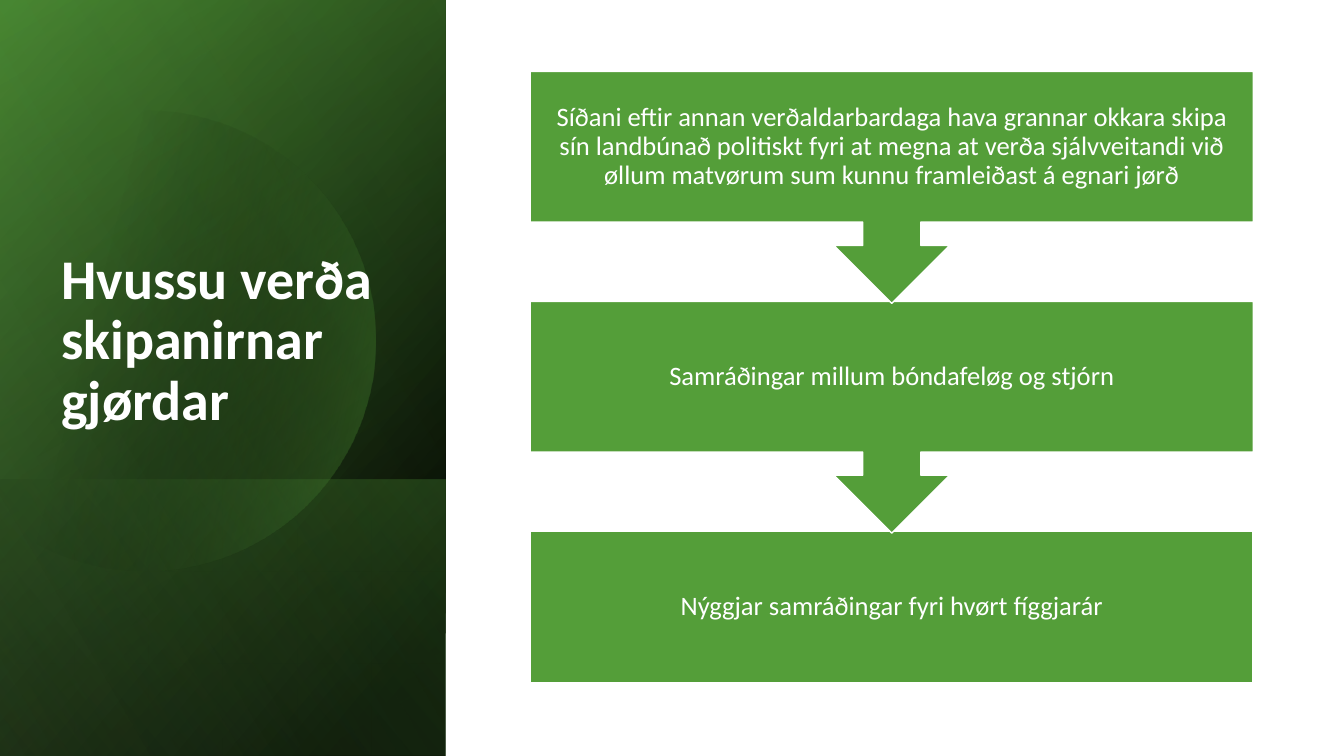
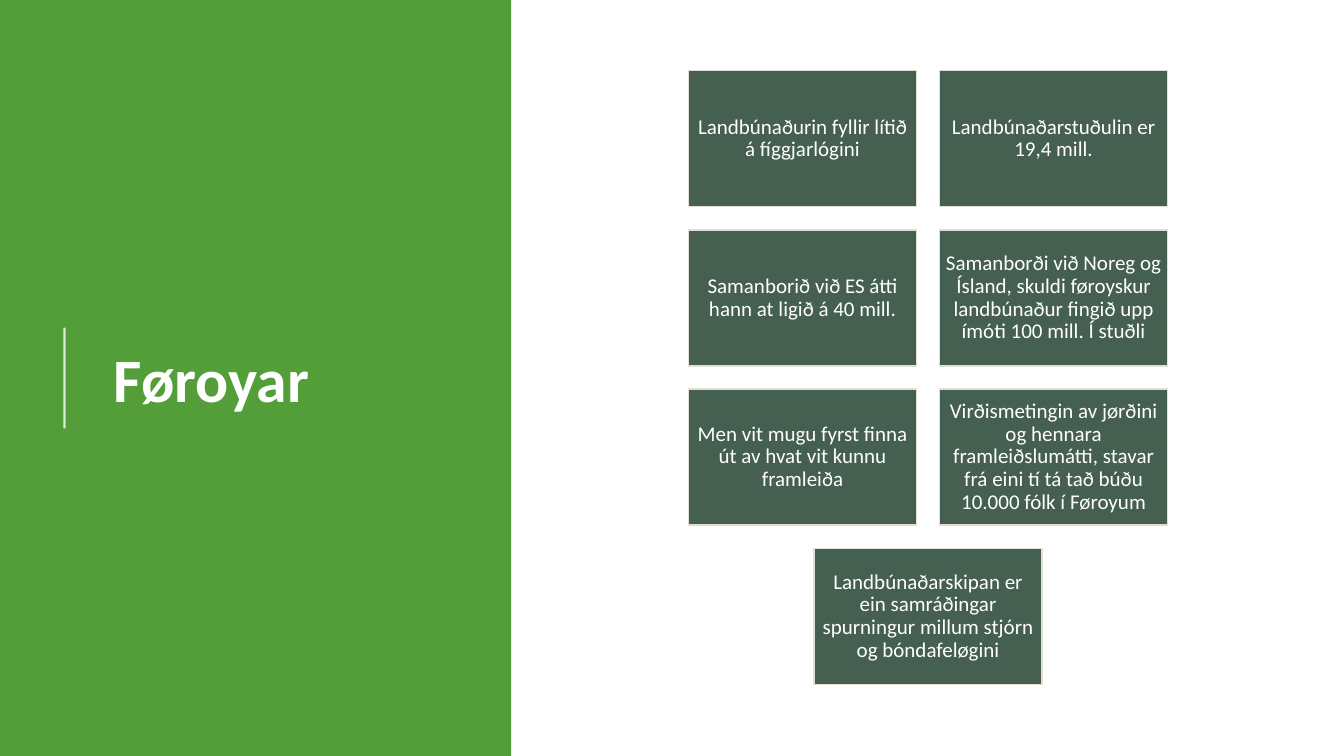
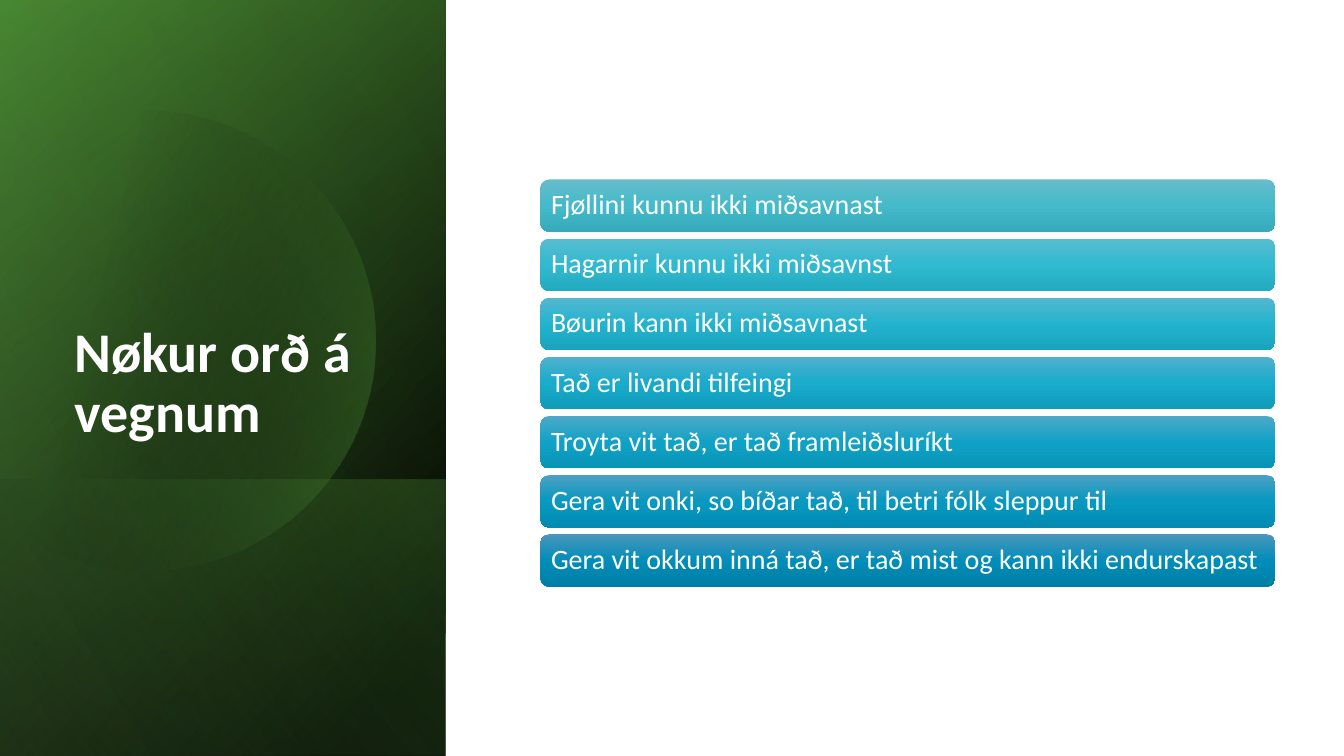
from math import cos, radians, sin

from lxml import etree
from pptx import Presentation
from pptx.dml.color import RGBColor
from pptx.enum.shapes import MSO_CONNECTOR, MSO_SHAPE
from pptx.enum.text import MSO_ANCHOR, PP_ALIGN
from pptx.oxml import parse_xml
from pptx.oxml.ns import qn
from pptx.util import Inches, Pt

RECT = MSO_SHAPE.RECTANGLE
ROUND = MSO_SHAPE.ROUNDED_RECTANGLE
CALLOUT = MSO_SHAPE.DOWN_ARROW_CALLOUT
LINE = MSO_CONNECTOR.STRAIGHT
LEFT, CENTER = PP_ALIGN.LEFT, PP_ALIGN.CENTER
MIDDLE, BOTTOM = MSO_ANCHOR.MIDDLE, MSO_ANCHOR.BOTTOM

FONT = "Calibri"
WHITE, BLACK, GREEN = "FFFFFF", "000000", "549E39"
SLATE, SAND = "455F51", "E3DED1"
NS = "http://schemas.openxmlformats.org/drawingml/2006/main"


def paint(shape, fill, ang=0, edge=None):
    """Fill with one hex colour, or with (position, hex, alpha) stops."""
    shape.shadow.inherit = False
    if edge:
        shape.line.color.rgb = RGBColor.from_string(edge)
        shape.line.width = Pt(1)
    else:
        shape.line.fill.background()
    if isinstance(fill, str):
        shape.fill.solid()
        shape.fill.fore_color.rgb = RGBColor.from_string(fill)
        return
    stops = "".join(
        f'<a:gs pos="{pos * 1000}"><a:srgbClr val="{hue}">'
        f'<a:alpha val="{alpha * 1000}"/></a:srgbClr></a:gs>'
        for pos, hue, alpha in fill)
    shape.fill.background()
    props = shape._element.spPr
    props.replace(props.find(qn("a:noFill")), parse_xml(
        f'<a:gradFill xmlns:a="{NS}" rotWithShape="1"><a:gsLst>{stops}</a:gsLst>'
        f'<a:lin ang="{ang * 60000}" scaled="0"/></a:gradFill>'))


def write(shape, text, size=20, bold=False, align=LEFT, anchor=MIDDLE,
          inset=(0.1, 0.05)):
    frame = shape.text_frame
    frame.word_wrap = True
    frame.vertical_anchor = anchor
    frame.margin_left = frame.margin_right = Inches(inset[0])
    frame.margin_top = frame.margin_bottom = Inches(inset[1])
    para = frame.paragraphs[0]
    para.alignment = align
    para.line_spacing = 0.9
    run = para.add_run()
    run.text = text
    run.font.name = FONT
    run.font.size = Pt(size)
    run.font.bold = bold
    run.font.color.rgb = RGBColor.from_string(WHITE)


prs = Presentation()
prs.slide_width, prs.slide_height = Inches(13.33), Inches(7.5)
steps, land, words = [prs.slides.add_slide(prs.slide_layouts[6]) for _ in range(3)]

# Dark band: turned gradient layers as (left, top, width, height, stops, angle)
FULL = (-1.54, 1.54, 7.5, 4.42)
LAYERS = [
    (*FULL, [(8, BLACK, 100), (100, "3F762B", 100)], 50),
    (*FULL, [(0, BLACK, 0), (99, GREEN, 46)], 30),
    (0.84, 3.92, 2.74, 4.42, [(2, GREEN, 29), (100, BLACK, 30)], 130),
    (*FULL, [(0, BLACK, 0), (99, "93D07D", 11)], 120),
]
# Circle in the band, cut off at the slide's left edge
MID_X, MID_Y, RADIUS = 1.44, 3.38, 2.28
ARC = [(Inches(MID_X + RADIUS * cos(radians(deg))),
        Inches(MID_Y + RADIUS * sin(radians(deg)))) for deg in range(-129, 130, 2)]

for slide in (steps, words):
    for num, (x, y, w, h, stops, ang) in enumerate(LAYERS):
        if num == 3:
            pen = slide.shapes.build_freeform(*ARC[0])
            pen.add_line_segments(ARC[1:], close=True)
            paint(pen.convert_to_shape(), [(29, BLACK, 0), (100, GREEN, 43)], 14)
        layer = slide.shapes.add_shape(RECT, Inches(x), Inches(y), Inches(w), Inches(h))
        layer.rotation = 90
        layer._element.spPr.xfrm.set("flipH", "1")
        paint(layer, stops, ang)

# Green panel and rule
panel = land.shapes.add_shape(RECT, 0, 0, Inches(5.07), Inches(7.5))
paint(panel, GREEN)
rule = land.shapes.add_connector(LINE, Inches(0.64), Inches(4.25), Inches(0.64), Inches(3.25))
rule.line.color.rgb = RGBColor.from_string(WHITE)
rule.line.width = Pt(1.5)
props = rule._element.spPr
etree.SubElement(next(props.iter(qn("a:srgbClr"))), qn("a:alpha")).set("val", "80000")
etree.SubElement(props, qn("a:effectLst"))

# Titles
TITLES = [
    (steps, "Hvussu verða skipanirnar gjørdar", 0.51, 0.64, 3.5, 3.7, 40, BOTTOM),
    (land, "Føroyar", 1.03, 0.78, 3.69, 6.02, 44, MIDDLE),
    (words, "Nøkur orð á vegnum", 0.64, 1.84, 3.41, 2.62, 40, BOTTOM),
]
for slide, text, x, y, w, h, size, anchor in TITLES:
    title = slide.shapes.add_textbox(Inches(x), Inches(y), Inches(w), Inches(h))
    write(title, text, size=size, bold=True, anchor=anchor)

# Slide 1: steps, drawn from the last up so each arrow tip lies on top
STEPS = [
    "Síðani eftir annan verðaldarbardaga hava grannar okkara skipa sín landbúnað "
    "politiskt fyri at megna at verða sjálvveitandi við øllum matvørum sum kunnu "
    "framleiðast á egnari jørð",
    "Samráðingar millum bóndafeløg og stjórn",
    "Nýggjar samráðingar fyri hvørt fíggjarár",
]
for num, text in reversed(list(enumerate(STEPS))):
    kind, high = (RECT, 1.5) if num == len(STEPS) - 1 else (CALLOUT, 2.3)
    box = steps.shapes.add_shape(
        kind, Inches(5.26), Inches(0.71 + num * 2.28), Inches(7.17), Inches(high))
    paint(box, GREEN, edge=WHITE)
    write(box, text, size=19, align=CENTER, inset=(0.15, 0.15))

# Slide 2: two-column grid, with the odd card centred
CARDS = [
    "Landbúnaðurin fyllir lítið á fíggjarlógini",
    "Landbúnaðarstuðulin er 19,4 mill.",
    "Samanborið við ES átti hann at ligið á 40 mill.",
    "Samanborði við Noreg og Ísland, skuldi føroyskur landbúnaður fingið upp "
    "ímóti 100 mill. Í stuðli",
    "Men vit mugu fyrst finna út av hvat vit kunnu framleiða",
    "Virðismetingin av jørðini og hennara framleiðslumátti, stavar frá eini tí tá "
    "tað búðu 10.000 fólk í Føroyum",
    "Landbúnaðarskipan er ein samráðingar spurningur millum stjórn og bóndafeløgini",
]
for num, text in enumerate(CARDS):
    row, col = divmod(num, 2)
    if num == len(CARDS) - 1:
        col = 0.5
    card = land.shapes.add_shape(
        RECT, Inches(6.83 + col * 2.49), Inches(0.7 + row * 1.58),
        Inches(2.26), Inches(1.35))
    paint(card, SLATE, edge=SAND)
    write(card, text, size=15, align=CENTER, inset=(0.06, 0.06))

# Slide 3: stacked bars, each with its top, middle and bottom colour
BARS = [
    ("Fjøllini kunnu ikki miðsavnast", "65BDCB", "44BACA", "36AABA"),
    ("Hagarnir kunnu ikki miðsavnst", "59BDD0", "30B9D0", "23AAC0"),
    ("Bøurin kann ikki miðsavnast", "53B8D0", "24B3CE", "19A3BE"),
    ("Tað er livandi tilfeingi", "4FB1CD", "19ABCB", "109CBB"),
    ("Troyta vit tað, er tað framleiðsluríkt", "4DA9C8", "10A2C6", "0794B7"),
    ("Gera vit onki, so bíðar tað, til betri fólk sleppur til",
     "4CA0C3", "0898C0", "008BB2"),
    ("Gera vit okkum inná tað, er tað mist og kann ikki endurskapast",
     "4B97BC", "018DB9", "007EA5"),
]
pitch = (5.3 - 1.78) / (len(BARS) - 1)
for num, (text, *hues) in enumerate(BARS):
    bar = words.shapes.add_shape(
        ROUND, Inches(5.36), Inches(1.78 + num * pitch), Inches(7.29), Inches(0.52))
    paint(bar, [(pos, hue, 100) for pos, hue in zip((0, 50, 100), hues)], 90)
    write(bar, text, inset=(0.08, 0.08))

prs.save("out.pptx")
